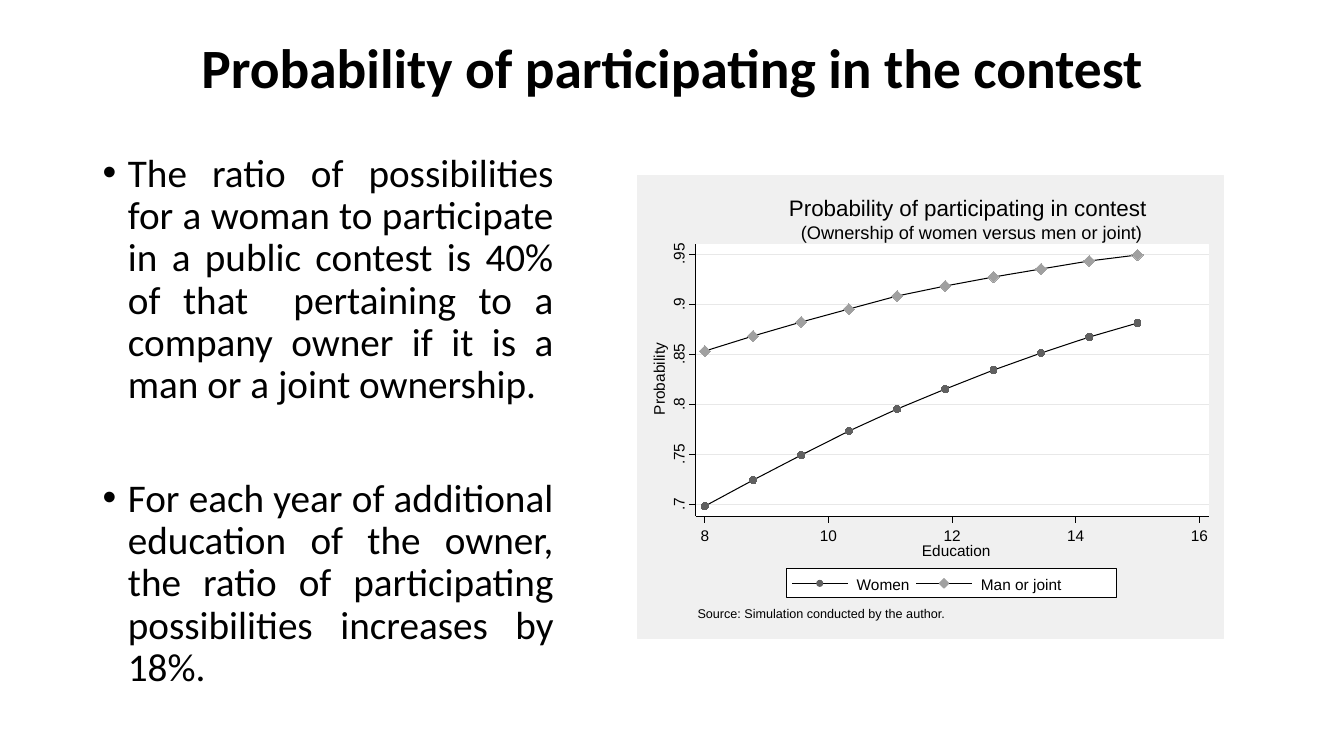
from dataclasses import dataclass

from lxml.etree import SubElement
from pptx import Presentation
from pptx.chart.data import XyChartData
from pptx.dml.color import RGBColor
from pptx.enum.chart import XL_CHART_TYPE, XL_MARKER_STYLE
from pptx.enum.shapes import MSO_CONNECTOR, MSO_SHAPE
from pptx.enum.text import MSO_ANCHOR, PP_ALIGN
from pptx.oxml import parse_xml
from pptx.oxml.ns import nsdecls, qn
from pptx.util import Cm, Pt


@dataclass(frozen=True)
class Box:
    left: float
    top: float
    width: float
    height: float

    def lengths(self) -> tuple:
        return Cm(self.left), Cm(self.top), Cm(self.width), Cm(self.height)


@dataclass(frozen=True)
class Label:
    text: str
    center_x: float
    center_y: float
    width: float
    size: float = 11
    rotation: int = 0
    align: PP_ALIGN = PP_ALIGN.CENTER


@dataclass(frozen=True)
class Series:
    name: str
    probabilities: tuple
    marker: XL_MARKER_STYLE
    marker_size: int
    color: str
    legend_shape: MSO_SHAPE
    legend_left: float


PANEL = Box(16.07, 4.42, 14.76, 11.67)
PLOT = Box(17.53, 6.15, 12.93, 6.86)
PLOT_RIGHT, PLOT_BOTTOM = PLOT.left + PLOT.width, PLOT.top + PLOT.height
LEGEND = Box(19.81, 14.33, 8.33, 0.74)
LEGEND_MIDDLE = 14.7
EDUCATION_RANGE = (7.85, 16.15)
PROBABILITY_RANGE = (0.688, 0.96)
EDUCATION_TICKS = (8, 10, 12, 14, 16)
PROBABILITY_TICKS = (0.7, 0.75, 0.8, 0.85, 0.9, 0.95)
TICK_LENGTH = 0.17
SERIES = (
    Series("Women", (0.698, 0.724, 0.749, 0.773, 0.795, 0.815, 0.834, 0.851, 0.867, 0.881),
           XL_MARKER_STYLE.CIRCLE, 5, "606060", MSO_SHAPE.OVAL, 19.96),
    Series("Man or joint", (0.853, 0.868, 0.882, 0.895, 0.908, 0.918, 0.927, 0.935, 0.943, 0.949),
           XL_MARKER_STYLE.DIAMOND, 8, "A0A0A0", MSO_SHAPE.DIAMOND, 23.09),
)
CAPTIONS = (
    Label("Probability of participating in contest", 24.39, 5.22, 10, 16),
    Label("(Ownership of women versus men or joint)", 24.48, 5.84, 10, 13),
    Label("Probability", 16.6, 9.55, 2.4, rotation=270),
    Label("Education", 24.1, 13.88, 2.4),
    Label("Source: Simulation conducted by the author.", 21.08, 15.46, 7, 9, align=PP_ALIGN.LEFT),
)
BULLETS = (
    ("The ratio of possibilities for a woman to participate in a public contest is 40% "
     "of that  pertaining to a company owner if it is a man or a joint ownership.", 10),
    ("For each year of additional education of the owner, the ratio of participating "
     "possibilities increases by 18%.", 50.5),
)


def color(value: str) -> RGBColor:
    return RGBColor.from_string(value)


def education_x(value: float) -> float:
    low, high = EDUCATION_RANGE
    return PLOT.left + (value - low) / (high - low) * PLOT.width


def probability_y(value: float) -> float:
    low, high = PROBABILITY_RANGE
    return PLOT_BOTTOM - (value - low) / (high - low) * PLOT.height


def add_text_box(slide, box: Box, anchor: MSO_ANCHOR):
    shape = slide.shapes.add_textbox(*box.lengths())
    shape.text_frame.word_wrap = True
    shape.text_frame.vertical_anchor = anchor
    return shape


def style_paragraph(paragraph, text: str, font: str, size: float, align: PP_ALIGN) -> None:
    paragraph.text = text
    paragraph.alignment = align
    paragraph.font.name = font
    paragraph.font.size = Pt(size)
    paragraph.font.color.rgb = color("000000")


def add_label(slide, label: Label) -> None:
    height = label.size * 0.044
    box = Box(label.center_x - label.width / 2, label.center_y - height / 2, label.width, height)
    shape = add_text_box(slide, box, MSO_ANCHOR.MIDDLE)
    shape.rotation = label.rotation
    frame = shape.text_frame
    frame.margin_left = frame.margin_right = frame.margin_top = frame.margin_bottom = 0
    style_paragraph(frame.paragraphs[0], label.text, "Arial", label.size, label.align)


def add_filled(slide, kind: MSO_SHAPE, box: Box, fill: str, line: str):
    shape = slide.shapes.add_shape(kind, *box.lengths())
    shape.shadow.inherit = False
    shape.fill.solid()
    shape.fill.fore_color.rgb = color(fill)
    style_line(shape.line, line)
    return shape


def style_line(line, line_color: str) -> None:
    line.color.rgb = color(line_color)
    line.width = Pt(0.75)


def add_line(slide, start: tuple, end: tuple, line_color: str = "000000"):
    points = [Cm(value) for value in (*start, *end)]
    connector = slide.shapes.add_connector(MSO_CONNECTOR.STRAIGHT, *points)
    style_line(connector.line, line_color)
    SubElement(connector._element.spPr, qn("a:effectLst"))
    return connector


def add_probability_chart(slide) -> None:
    data = XyChartData()
    for series in SERIES:
        points = data.add_series(series.name)
        for index, probability in enumerate(series.probabilities):
            points.add_data_point(round(8 + 7 * index / 9, 2), probability)
    chart = slide.shapes.add_chart(XL_CHART_TYPE.XY_SCATTER_LINES, *PANEL.lengths(), data).chart
    chart.has_title = chart.has_legend = False
    chart.font.name, chart.font.size = "Arial", Pt(11)
    chart.font.color.rgb = color("000000")
    chart.plots[0].vary_by_categories = False
    for axis, limits in ((chart.category_axis, EDUCATION_RANGE), (chart.value_axis, PROBABILITY_RANGE)):
        axis.minimum_scale, axis.maximum_scale = limits
        axis.has_major_gridlines = axis.visible = False
    for plotted, series in zip(chart.plots[0].series, SERIES):
        plotted.smooth = False
        style_line(plotted.format.line, "000000")
        points = [plotted.points[index] for index in range(len(series.probabilities))]
        for point in points:
            style_line(point.format.line, series.color)
        for marker in (plotted.marker, *(point.marker for point in points)):
            marker.style, marker.size = series.marker, series.marker_size
            marker.format.fill.solid()
            marker.format.fill.fore_color.rgb = color(series.color)
            marker.format.line.color.rgb = color(series.color)
    plot_area = chart._chartSpace.chart.plotArea
    for layout in plot_area.findall(qn("c:layout")):
        plot_area.remove(layout)
    sizes = {"x": (PLOT.left - PANEL.left) / PANEL.width, "y": (PLOT.top - PANEL.top) / PANEL.height,
             "w": PLOT.width / PANEL.width, "h": PLOT.height / PANEL.height}
    plot_area.insert(0, parse_xml(
        f'<c:layout {nsdecls("c")}><c:manualLayout><c:layoutTarget val="inner"/>'
        '<c:xMode val="edge"/><c:yMode val="edge"/>'
        + "".join(f'<c:{name} val="{size:.4f}"/>' for name, size in sizes.items())
        + '</c:manualLayout></c:layout>'))
    clear = f'<c:spPr {nsdecls("c", "a")}><a:noFill/><a:ln><a:noFill/></a:ln></c:spPr>'
    plot_area.append(parse_xml(clear))
    chart._chartSpace.chart.addnext(parse_xml(clear))


def add_axes(slide, plot) -> None:
    corner = (PLOT.left, PLOT_BOTTOM)
    for end in ((PLOT.left, PLOT.top), (PLOT_RIGHT, PLOT_BOTTOM)):
        add_line(slide, corner, end)
    for value in PROBABILITY_TICKS:
        y = probability_y(value)
        add_line(slide, (PLOT.left, y), (PLOT.left - TICK_LENGTH, y))
        add_label(slide, Label(f"{value:g}".lstrip("0"), 17.1, y, 0.8, rotation=270))
    for value in EDUCATION_TICKS:
        x = education_x(value)
        tick = add_line(slide, (x, PLOT_BOTTOM), (x, PLOT_BOTTOM + TICK_LENGTH))
        if value == sum(EDUCATION_RANGE) / 2:
            tick.begin_connect(plot, 2)
        add_label(slide, Label(str(value), x, 13.5, 0.8))


def add_legend(slide) -> None:
    add_filled(slide, MSO_SHAPE.RECTANGLE, LEGEND, "FFFFFF", "000000")
    for series in SERIES:
        left, size = series.legend_left, series.marker_size * 0.03
        add_line(slide, (left, LEGEND_MIDDLE), (left + 1.4, LEGEND_MIDDLE))
        box = Box(left + 0.7 - size / 2, LEGEND_MIDDLE - size / 2, size, size)
        add_filled(slide, series.legend_shape, box, series.color, series.color)
        add_label(slide, Label(series.name, left + 2.83, 14.73, 2.4, align=PP_ALIGN.LEFT))


def add_text(slide) -> None:
    title = add_text_box(slide, Box(2.34, 1, 29.21, 1.57), MSO_ANCHOR.MIDDLE)
    heading = title.text_frame.paragraphs[0]
    style_paragraph(heading, "Probability of participating in the contest", "Calibri", 39.6, PP_ALIGN.CENTER)
    heading.font.bold, heading.line_spacing = True, 0.9
    frame = add_text_box(slide, Box(2.34, 3.74, 11.86, 14.1), MSO_ANCHOR.TOP).text_frame
    for index, (text, space_before) in enumerate(BULLETS):
        paragraph = frame.add_paragraph() if index else frame.paragraphs[0]
        style_paragraph(paragraph, text, "Calibri", 28, PP_ALIGN.JUSTIFY)
        paragraph.line_spacing, paragraph.space_before = 0.9, Pt(space_before)
        properties = paragraph._p.get_or_add_pPr()
        properties.set("marL", str(Cm(0.635)))
        properties.set("indent", str(-Cm(0.635)))
        default_font = properties.find(qn("a:defRPr"))
        default_font.addprevious(parse_xml(f'<a:buFont {nsdecls("a")} typeface="Arial"/>'))
        default_font.addprevious(parse_xml(f'<a:buChar {nsdecls("a")} char="•"/>'))


presentation = Presentation()
presentation.slide_width, presentation.slide_height = Cm(33.87), Cm(19.05)
blank_slide = presentation.slides.add_slide(presentation.slide_layouts[6])
add_text(blank_slide)
add_filled(blank_slide, MSO_SHAPE.RECTANGLE, PANEL, "F0F0F0", "F0F0F0")
plot_background = add_filled(blank_slide, MSO_SHAPE.RECTANGLE, PLOT, "FFFFFF", "FFFFFF")
for tick_value in PROBABILITY_TICKS:
    grid_y = probability_y(tick_value)
    add_line(blank_slide, (PLOT.left, grid_y), (PLOT_RIGHT, grid_y), "E8E8E8")
add_probability_chart(blank_slide)
add_axes(blank_slide, plot_background)
add_legend(blank_slide)
for caption in CAPTIONS:
    add_label(blank_slide, caption)
presentation.save("out.pptx")
